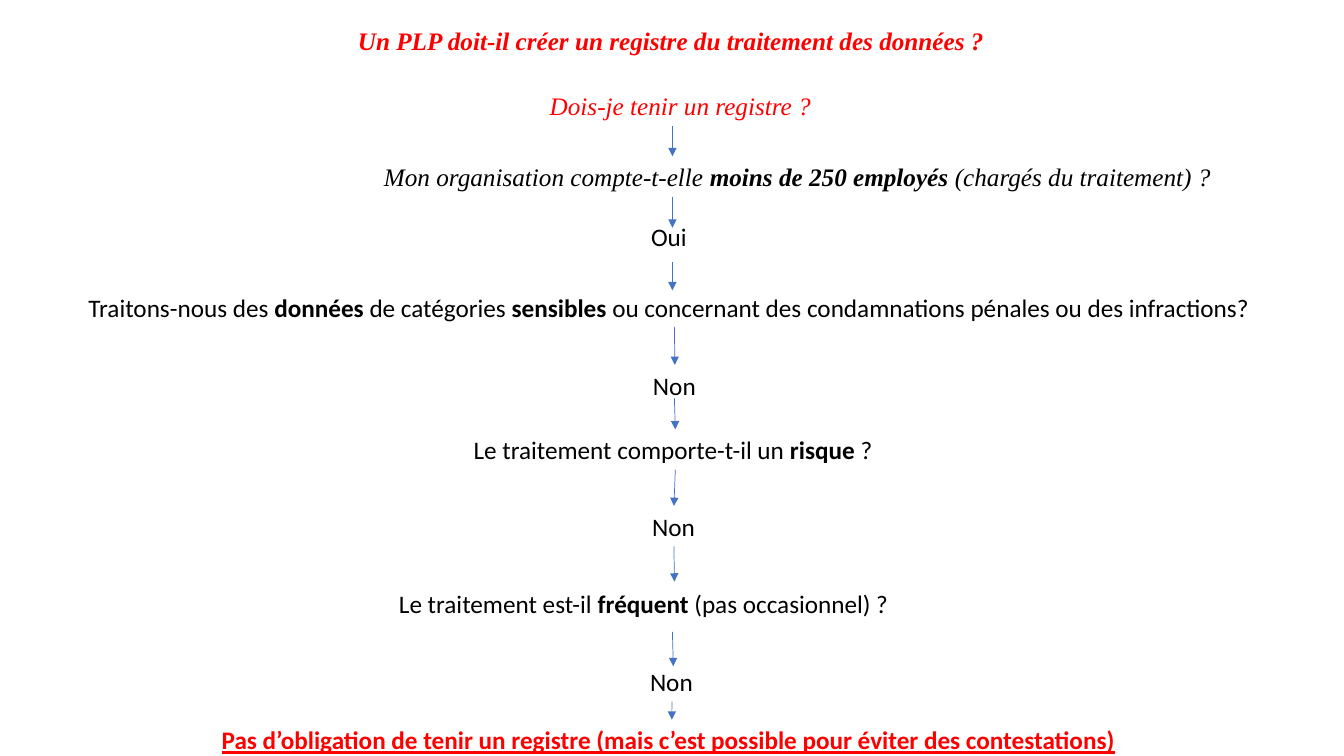
from dataclasses import dataclass

from lxml import etree
from pptx import Presentation
from pptx.dml.color import RGBColor
from pptx.enum.shapes import MSO_CONNECTOR
from pptx.enum.text import MSO_ANCHOR, MSO_AUTO_SIZE, PP_ALIGN
from pptx.oxml.ns import qn
from pptx.shapes.autoshape import Shape
from pptx.slide import Slide
from pptx.util import Inches, Pt

LEFT, CENTER = PP_ALIGN.LEFT, PP_ALIGN.CENTER
TOP = MSO_ANCHOR.TOP
GROW = MSO_AUTO_SIZE.SHAPE_TO_FIT_TEXT
STRAIGHT = MSO_CONNECTOR.STRAIGHT
TITLE_ONLY = 5
TOP_SITE, BOTTOM_SITE = 0, 2
WIDE, HIGH = Inches(13.333), Inches(7.5)
ROW = 5.33


@dataclass(frozen=True)
class Theme:
    sans: str = "Calibri"
    serif: str = "Times New Roman"
    black: RGBColor = RGBColor(0, 0, 0)
    red: RGBColor = RGBColor(255, 0, 0)
    blue: RGBColor = RGBColor(0x44, 0x72, 0xC4)
    size: Pt = Pt(18)
    line: Pt = Pt(0.5)


THEME = Theme()


@dataclass(frozen=True)
class Run:
    text: str
    bold: bool = False


@dataclass(frozen=True)
class Step:
    left: float
    top: float
    width: float
    runs: tuple[Run, ...]
    font: str = THEME.sans
    color: RGBColor = THEME.black
    italic: bool = False
    under: bool = False
    wrap: bool = False
    align: PP_ALIGN = LEFT


@dataclass(frozen=True)
class Arrow:
    start: tuple[float, float]
    end: tuple[float, float]
    source: str = ""
    target: str = ""


TITLE = Step(25.88, 2.67, 48.98,
             (Run("Un PLP doit-il créer un registre du traitement des données ?", True),),
             THEME.serif, THEME.red, italic=True, wrap=True)


def answer(left: float, top: float) -> Step:
    return Step(left, top, 4.73, (Run("Non"),))


STEPS = {
    "start": Step(15.9, 11.33, 69.45, (Run("Dois-je tenir un registre ?"),),
                  THEME.serif, THEME.red, italic=True, wrap=True, align=CENTER),
    "staff": Step(27.83, 20.67, 63.68, (
        Run("Mon organisation compte-t-elle "),
        Run("moins de 250 employés ", True),
        Run("(chargés du traitement) ?")), THEME.serif, italic=True),
    "yes": Step(47.7, 28.67, 5.1, (Run("Oui"),), wrap=True),
    "data": Step(5.85, 38, 88.35, (
        Run("Traitons-nous des "), Run("données", True),
        Run(" de catégories "), Run("sensibles", True),
        Run(" ou concernant des condamnations pénales ou des infractions?")), wrap=True),
    "no data": answer(47.85, 48.27),
    "risk": Step(34.5, 56.8, 31.5, (
        Run("Le traitement comporte-t-il un "), Run("risque", True), Run(" ?"))),
    "no risk": answer(47.78, 66.93),
    "often": Step(28.95, 77.2, 42.68, (
        Run("Le traitement est-il "), Run("fréquent", True),
        Run(" (pas occasionnel) ?")), wrap=True),
    "not often": answer(47.63, 87.47),
    "result": Step(15.75, 95.2, 68.48, (
        Run("Pas d’obligation de tenir un registre "
            "(mais c’est possible pour éviter des contestations)", True),),
        color=THEME.red, under=True),
}

ARROWS = (
    Arrow((50.03, 16.67), (50.03, 20.67)),
    Arrow((50.03, 26), (50.03, 30.13)),
    Arrow((50.03, 34.67), (50.03, 38.4)),
    Arrow((50.18, 43.2), (50.25, 48.13), target="no data"),
    Arrow((50.18, 52.67), (50.33, 56.53), target="risk"),
    Arrow((50.25, 62.13), (50.33, 67.07), "risk", "no risk"),
    Arrow((50.18, 72.4), (50.18, 76.93), source="no risk"),
    Arrow((50.03, 83.6), (50.1, 88.13)),
    Arrow((50.03, 92.8), (50.03, 95.2), "not often", "result"),
)


def across(share: float) -> int:
    return round(WIDE * share / 100)


def down(share: float) -> int:
    return round(HIGH * share / 100)


def write(shape: Shape, step: Step) -> None:
    shape.left, shape.top = across(step.left), down(step.top)
    shape.width, shape.height = across(step.width), down(ROW)
    frame = shape.text_frame
    frame.word_wrap = step.wrap
    frame.auto_size = GROW
    frame.vertical_anchor = TOP
    line = frame.paragraphs[0]
    line.alignment = step.align
    for part in step.runs:
        run = line.add_run()
        run.text = part.text
        font = run.font
        font.name, font.size = step.font, THEME.size
        font.bold, font.italic = part.bold, step.italic
        font.underline = step.under
        font.color.rgb = step.color


def add_step(slide: Slide, step: Step) -> Shape:
    box = slide.shapes.add_textbox(0, 0, across(step.width), down(ROW))
    write(box, step)
    return box


def add_arrow(slide: Slide, arrow: Arrow, boxes: dict[str, Shape]) -> None:
    (x1, y1), (x2, y2) = arrow.start, arrow.end
    link = slide.shapes.add_connector(STRAIGHT, across(x1), down(y1), across(x2), down(y2))
    if arrow.source:
        link.begin_connect(boxes[arrow.source], BOTTOM_SITE)
    if arrow.target:
        link.end_connect(boxes[arrow.target], TOP_SITE)
    link.line.color.rgb = THEME.blue
    link.line.width = THEME.line
    props = link.element.spPr
    etree.SubElement(props.find(qn("a:ln")), qn("a:tailEnd"), type="triangle")
    etree.SubElement(props, qn("a:effectLst"))


def main() -> None:
    deck = Presentation()
    deck.slide_width, deck.slide_height = WIDE, HIGH
    slide = deck.slides.add_slide(deck.slide_layouts[TITLE_ONLY])
    write(slide.shapes.title, TITLE)
    boxes = {name: add_step(slide, step) for name, step in STEPS.items()}
    for arrow in ARROWS:
        add_arrow(slide, arrow, boxes)
    deck.save("out.pptx")


if __name__ == "__main__":
    main()
